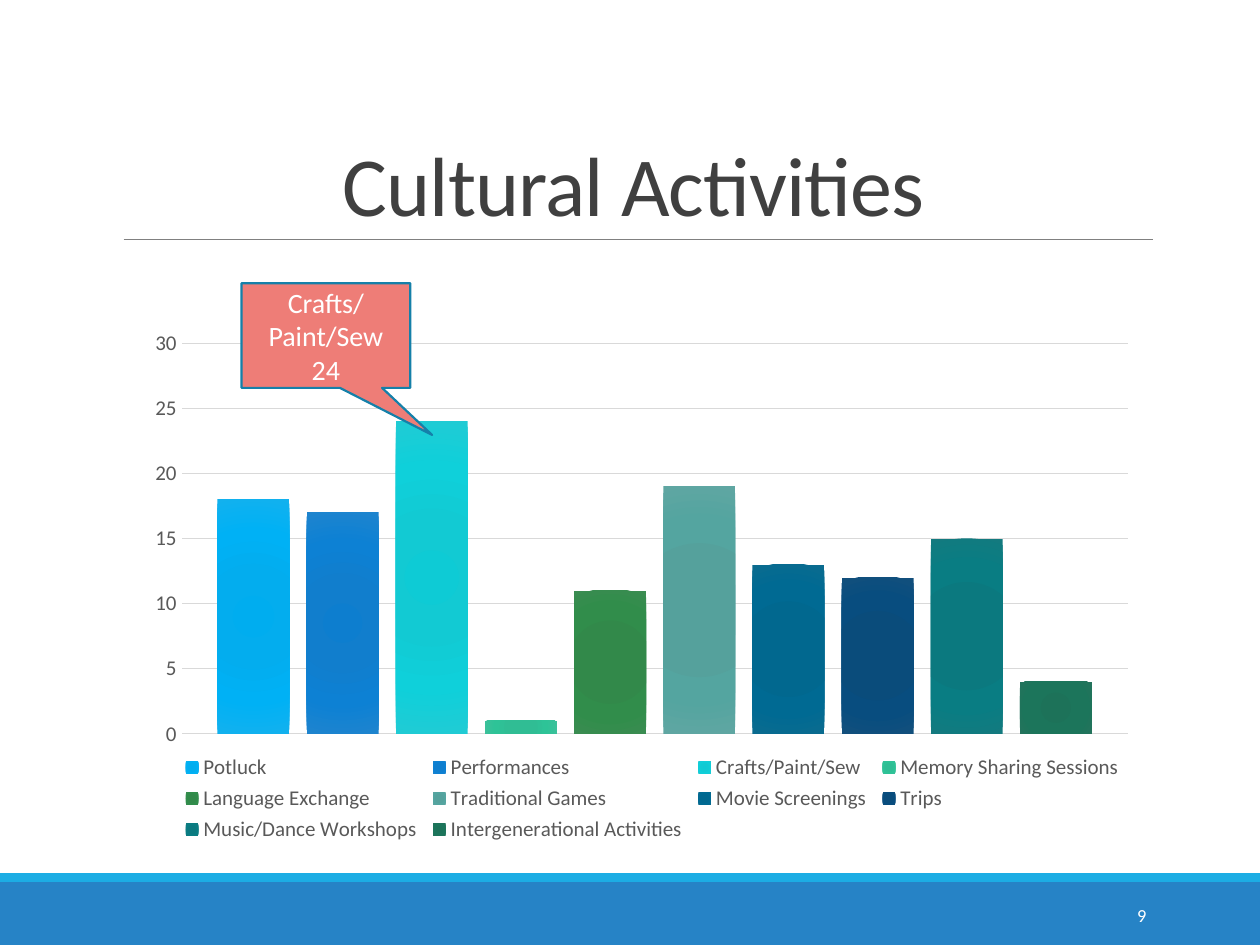
from lxml import etree
from pptx import Presentation
from pptx import util as u
from pptx.chart.data import CategoryChartData
from pptx.dml.color import RGBColor
from pptx.enum import chart as ch, shapes, text
from pptx.oxml import ns

COLORS = {
    "band": "2683C6", "stripe": "1CADE4", "rule": "808080",
    "title": "404040", "label": "595959", "grid": "D9D9D9",
    "callout": "EE7D77", "callout_edge": "1580A9", "white": "FFFFFF",
}
BAR_COLORS = {
    "Potluck": "00ADEF 03ADEE 00B1F5 12B1EE",
    "Performances": "0D7ECF 117ECD 0D81D4 1E84CE",
    "Crafts/Paint/Sew": "0ECBD5 12CAD3 0FD0DA 20CBD4",
    "Memory Sharing Sessions": "2DBE94 30BD94 2EC397 3CC09A",
    "Language Exchange": "2F8949 32894A 318D4B 3A8C51",
    "Traditional Games": "52A19C 55A19C 54A5A0 5FA6A2",
    "Movie Screenings": "00688F 01688F 006A93 0A6B8F",
    "Trips": "084B7C 0A4C7B 084D7F 124F7C",
    "Music/Dance Workshops": "097A80 0B797F 097D83 137A7F",
    "Intergenerational Activities": "1B7259 1D7259 1C755B 24735C",
}
ACTIVITY_COUNTS = dict(zip(BAR_COLORS, (18, 17, 24, 1, 11, 19, 13, 12, 15, 4)))
GRADIENT_STOPS = (0, 34, 70, 100)
FONT = "Calibri"
ALIGN = text.PP_ALIGN
ANCHOR = text.MSO_ANCHOR


def rgb(name):
    return RGBColor.from_string(COLORS[name])


def cm(*lengths):
    return [u.Cm(length) for length in lengths]


def add_xml(parent, tag, **attributes):
    return etree.SubElement(parent, ns.qn(tag), attributes)


def write(frame, *lines, size, color, align=ALIGN.CENTER, anchor=ANCHOR.MIDDLE,
          line_spacing=None, tracking=None):
    frame.word_wrap = True
    frame.auto_size = text.MSO_AUTO_SIZE.NONE
    frame.vertical_anchor = anchor
    for index, line in enumerate(lines):
        paragraph = frame.add_paragraph() if index else frame.paragraphs[0]
        paragraph.alignment = align
        paragraph.line_spacing = line_spacing
        run = paragraph.add_run()
        run.text = line
        run.font.name = FONT
        run.font.size = u.Pt(size)
        run.font.color.rgb = rgb(color)
        if tracking is not None:
            run.font._element.set("spc", str(round(tracking * 100)))


def format_font(font, size, color):
    font.name = FONT
    font.size = u.Pt(size)
    font.color.rgb = rgb(color)


def add_filled(slide, kind, box, fill, edge=None):
    shape = slide.shapes.add_shape(kind, *cm(*box))
    shape.shadow.inherit = False
    shape.fill.solid()
    shape.fill.fore_color.rgb = rgb(fill)
    if edge:
        shape.line.color.rgb = rgb(edge)
        shape.line.width = u.Pt(1.25)
    else:
        shape.line.fill.background()
    return shape


def add_footer(slide, box, page):
    left, top, width, height = box
    stripe_height = 0.18
    rectangle = shapes.MSO_SHAPE.RECTANGLE
    add_filled(slide, rectangle,
               (left, top + stripe_height, width, height - stripe_height), "band")
    add_filled(slide, rectangle, (left, top, width, stripe_height), "stripe")
    number = slide.shapes.add_textbox(
        *cm(left + width - 4.78, top + 0.33, 2.74, 1.02))
    write(number.text_frame, page, size=10.5, color="white", align=ALIGN.RIGHT)


def add_heading(slide, box, heading):
    left, top, width, height = box
    title = slide.shapes.title
    title.left, title.top, title.width, title.height = cm(*box)
    write(title.text_frame, heading, size=48, color="title",
          anchor=ANCHOR.BOTTOM, line_spacing=0.85, tracking=-0.5)
    bottom = top + height
    rule = slide.shapes.add_connector(
        shapes.MSO_CONNECTOR.STRAIGHT,
        *cm(left + 0.2, bottom, left + width, bottom))
    rule.line.color.rgb = rgb("rule")
    rule.line.width = u.Pt(0.5)
    add_xml(rule._element.spPr, "a:effectLst")


def fill_radial(series, colors):
    properties = series._element.get_or_add_spPr()
    gradient = add_xml(properties, "a:gradFill", rotWithShape="1")
    stops = add_xml(gradient, "a:gsLst")
    for position, color in zip(GRADIENT_STOPS, colors):
        stop = add_xml(stops, "a:gs", pos=str(position * 1000))
        add_xml(stop, "a:srgbClr", val=color)
    radial = add_xml(gradient, "a:path", path="circle")
    add_xml(radial, "a:fillToRect", **dict.fromkeys("ltrb", "100000"))


def place_part(part, index, **settings):
    for old in part.findall(ns.qn("c:layout")):
        part.remove(old)
    layout = etree.Element(ns.qn("c:layout"))
    part.insert(index, layout)
    manual = add_xml(layout, "c:manualLayout")
    for tag, value in settings.items():
        add_xml(manual, f"c:{tag}", val=str(value))


def add_activity_chart(slide, box):
    data = CategoryChartData()
    data.categories = ["1"]
    for activity, count in ACTIVITY_COUNTS.items():
        data.add_series(activity, [count])
    chart = slide.shapes.add_chart(
        ch.XL_CHART_TYPE.COLUMN_CLUSTERED, *cm(*box), data).chart
    chart.has_title = False
    format_font(chart.font, 12, "label")
    place_part(chart._chartSpace.chart.plotArea, 0, layoutTarget="inner",
               xMode="edge", yMode="edge", x=0.065, y=0.167, w=0.905, h=0.629)

    columns = chart.plots[0]
    columns.vary_by_categories = False
    columns.gap_width = 100
    columns.overlap = -24
    for series in columns.series:
        fill_radial(series, BAR_COLORS[series.name].split())

    chart.category_axis.visible = False
    counts = chart.value_axis
    counts.minimum_scale, counts.maximum_scale, counts.major_unit = 0, 30, 5
    counts.major_tick_mark = ch.XL_TICK_MARK.NONE
    counts.format.line.fill.background()
    format_font(counts.tick_labels.font, 12, "label")
    gridline = counts.major_gridlines.format.line
    gridline.color.rgb = rgb("grid")
    gridline.width = u.Pt(0.75)

    chart.has_legend = True
    chart.legend.position = ch.XL_LEGEND_POSITION.BOTTOM
    chart.legend.include_in_layout = False
    format_font(chart.legend.font, 12, "label")
    place_part(chart.legend._element, 1, xMode="edge", yMode="edge",
               x=0.06, y=0.82, w=0.91, h=0.16)


def add_callout(slide, box, activity):
    callout = add_filled(slide, shapes.MSO_SHAPE.RECTANGULAR_CALLOUT, box,
                         "callout", edge="callout_edge")
    callout.adjustments[0] = 0.63
    callout.adjustments[1] = 0.95
    write(callout.text_frame, activity, str(ACTIVITY_COUNTS[activity]),
          size=16, color="white")


def main():
    deck = Presentation()
    deck.slide_width, deck.slide_height = cm(25.4, 19.05)
    slide = deck.slides.add_slide(deck.slide_layouts[5])
    add_footer(slide, (0, 17.6, 25.4, 1.45), "9")
    add_heading(slide, (2.29, 0.79, 20.96, 4.04), "Cultural Activities")
    add_activity_chart(slide, (2.29, 4.83, 21.08, 12.52))
    add_callout(slide, (4.87, 5.71, 3.4, 2.11), "Crafts/Paint/Sew")
    deck.save("out.pptx")


if __name__ == "__main__":
    main()
